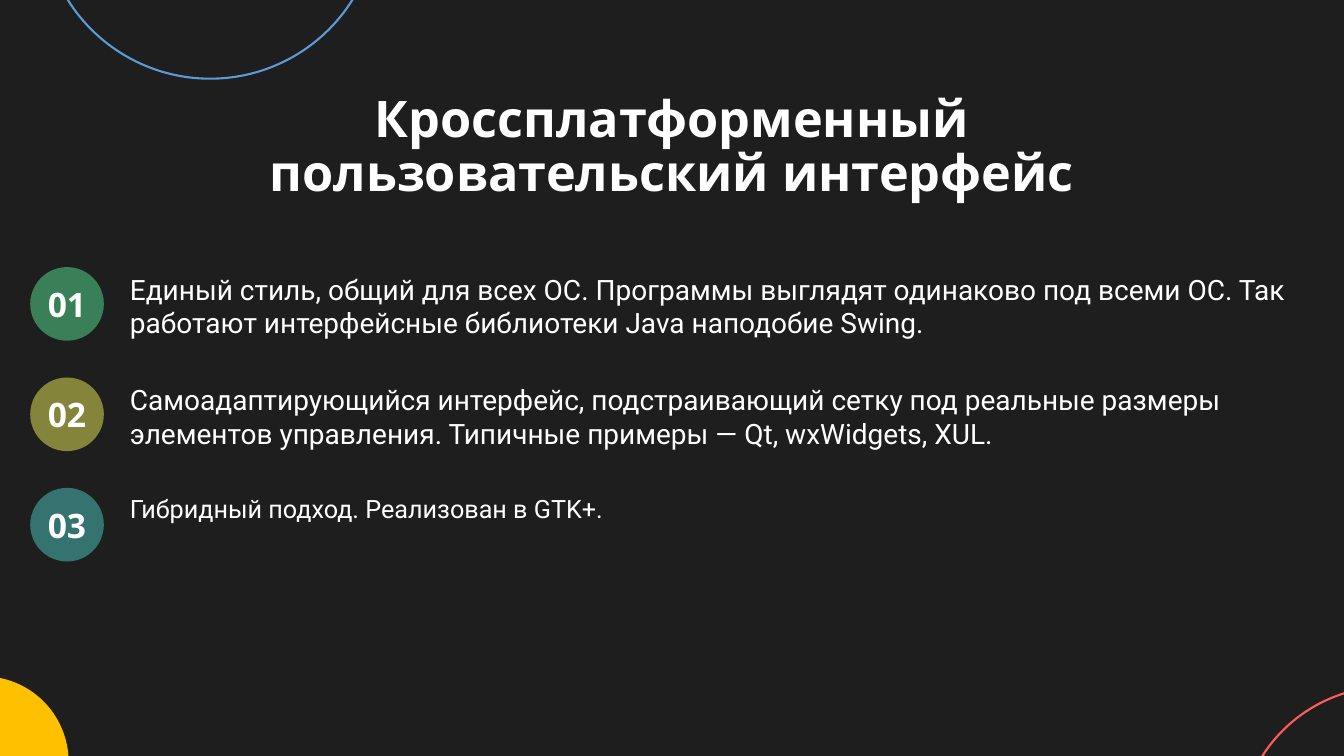
"""Build a slide on approaches to a cross-platform user interface."""
from lxml.etree import SubElement
from pptx import Presentation
from pptx.dml.color import RGBColor
from pptx.enum.shapes import MSO_SHAPE as Shape
from pptx.enum.text import MSO_ANCHOR as Anchor, MSO_AUTO_SIZE as AutoSize, PP_ALIGN as Align
from pptx.oxml.ns import qn
from pptx.util import Pt

TITLE = "Кроссплатформенный пользовательский интерфейс"
APPROACHES = [
    ("Единый стиль, общий для всех ОС. Программы выглядят одинаково под всеми ОС. "
     "Так работают интерфейсные библиотеки Java наподобие Swing.", "5CFFA6", 44, 20),
    ("Самоадаптирующийся интерфейс, подстраивающий сетку под реальные размеры "
     "элементов управления. Типичные примеры — Qt, wxWidgets, XUL.", "FDFF5C", 46, 20),
    ("Гибридный подход. Реализован в GTK+.", "5CFFF8", 38, 18),
]
CORNER_CIRCLES = [
    (-72.7, 483.8, 121, "FFC000", "FFC000"),
    (884.9, 490.3, 214.6, None, "FF5C5C"),
    (30.2, -183.6, 239.8, None, "5B9BD5"),
]
THEME = {
    "background": "1E1E1E",
    "title": {"name": "Open Sans", "size": Pt(36), "bold": True},
    "number": {"name": "Open Sans", "size": Pt(24), "bold": True},
    "body": {"name": "Roboto", "bold": False},
    "text": "FFFFFF",
    "outline": 1.5,
}
ROW_TOP, ROW_STEP, BADGE_LEFT, BADGE_SIZE = 190.8, 78.85, 21.6, 52.6
TEXT_LEFT, TEXT_WIDTH, LINE_HEIGHT = 85.7, 841, 24


def set_values(target, values):
    """Set each named attribute of the target."""
    for name, value in values.items():
        setattr(target, name, value)


def write(frame, text, font, align, anchor, inset, spacing=None, wrap=True):
    """Fill a text frame with one formatted paragraph."""
    set_values(frame, {"auto_size": AutoSize.NONE, "word_wrap": wrap, "vertical_anchor": anchor})
    sides = ("margin_left", "margin_top", "margin_right", "margin_bottom")
    set_values(frame, dict(zip(sides, map(Pt, inset))))
    para = frame.paragraphs[0]
    set_values(para, {"alignment": align, "line_spacing": spacing})
    span = para.add_run()
    span.text = text
    set_values(span.font, font)
    span.font.color.rgb = RGBColor.from_string(THEME["text"])


def add_circle(page, left, top, size, fill=None, line=None, opacity=100):
    """Add a circle with an optional fill, outline and opacity."""
    circle = page.shapes.add_shape(Shape.OVAL, Pt(left), Pt(top), Pt(size), Pt(size))
    circle.shadow.inherit = False
    if fill:
        circle.fill.solid()
        circle.fill.fore_color.rgb = RGBColor.from_string(fill)
        if opacity < 100:
            color = circle.element.spPr.find(qn("a:solidFill")).find(qn("a:srgbClr"))
            SubElement(color, qn("a:alpha"), val=str(opacity * 1000))
    else:
        circle.fill.background()
    if line:
        circle.line.color.rgb = RGBColor.from_string(line)
        circle.line.width = Pt(THEME["outline"])
    else:
        circle.line.fill.background()
    return circle


def add_approach(page, index, text, color, opacity, size):
    """Add a numbered badge and its description."""
    top = ROW_TOP + index * ROW_STEP
    badge = add_circle(page, BADGE_LEFT, top, BADGE_SIZE, color, opacity=opacity)
    write(badge.text_frame, f"{index + 1:02}", THEME["number"], Align.CENTER,
          Anchor.MIDDLE, (0, 0, 0, 0), wrap=False)
    box = page.shapes.add_textbox(Pt(TEXT_LEFT), Pt(top), Pt(TEXT_WIDTH),
                                  Pt(LINE_HEIGHT * (2 if len(text) > 90 else 1) + 7.2))
    write(box.text_frame, text, {**THEME["body"], "size": Pt(size)}, Align.LEFT,
          Anchor.TOP, (7.2, 3.6, 7.2, 3.6))


def main():
    """Build and save the deck."""
    deck = Presentation()
    set_values(deck, {"slide_width": Pt(960), "slide_height": Pt(540)})
    page = deck.slides.add_slide(deck.slide_layouts[5])
    page.background.fill.solid()
    page.background.fill.fore_color.rgb = RGBColor.from_string(THEME["background"])
    title = page.shapes.title
    set_values(title, {"left": Pt(110.2), "top": Pt(81.4), "width": Pt(739.4), "height": Pt(49)})
    write(title.text_frame, TITLE, THEME["title"], Align.CENTER, Anchor.MIDDLE,
          (9.4, 9.4, 9.4, 9.4), spacing=0.9)
    for circle in CORNER_CIRCLES:
        add_circle(page, *circle)
    for index, approach in enumerate(APPROACHES):
        add_approach(page, index, *approach)
    deck.save("out.pptx")


if __name__ == "__main__":
    main()
